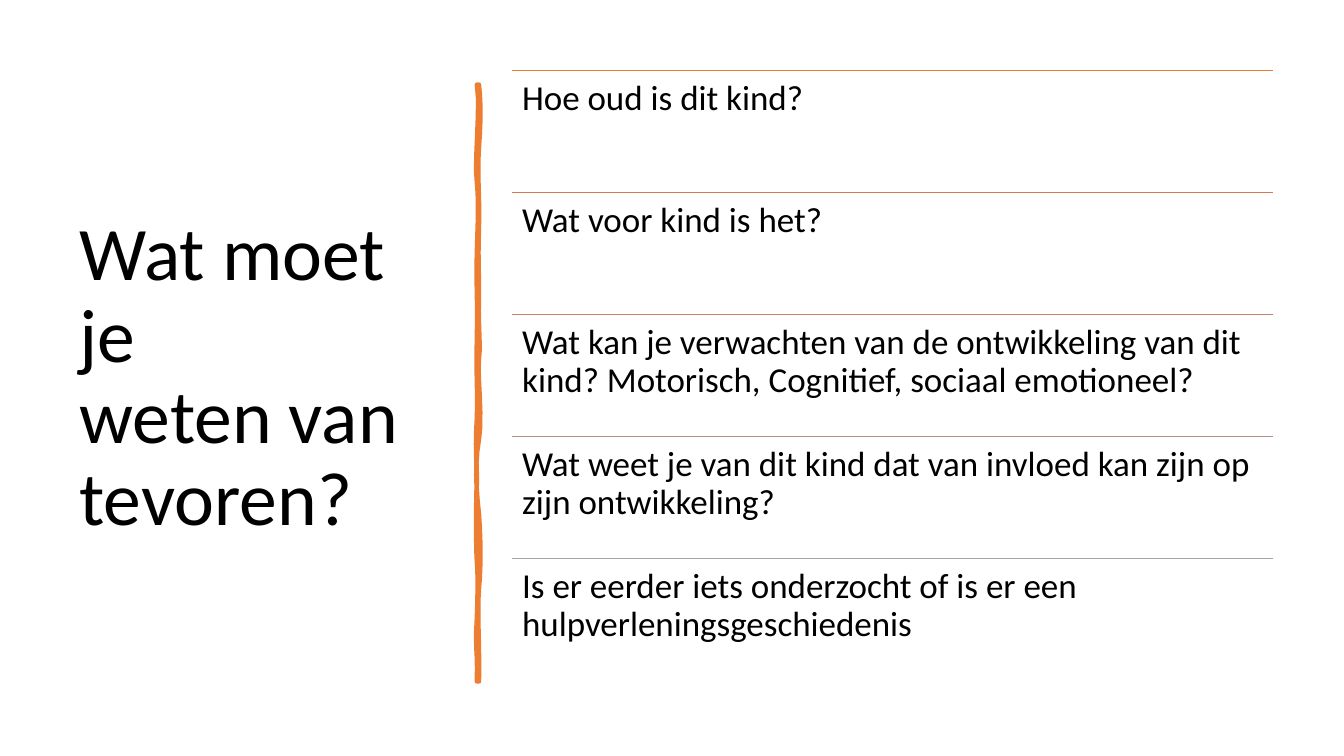
from lxml import etree
from pptx import Presentation
from pptx import util as u
from pptx.dml.color import RGBColor
from pptx.enum import shapes, text
from pptx.oxml import ns

BLACK = RGBColor(0x00, 0x00, 0x00)
ORANGE = RGBColor(0xED, 0x7D, 0x31)
TERRACOTTA = RGBColor(0xD8, 0x7A, 0x51)
ROSE = RGBColor(0xC4, 0x81, 0x70)
MAUVE = RGBColor(0xB4, 0x90, 0x8B)
GREY = RGBColor(0xA5, 0xA5, 0xA5)

QUESTIONS = [
    ("Hoe oud is dit kind?", ORANGE),
    ("Wat voor kind is het?", TERRACOTTA),
    ("Wat kan je verwachten van de ontwikkeling van dit kind? "
     "Motorisch, Cognitief, sociaal emotioneel?", ROSE),
    ("Wat weet je van dit kind dat van invloed kan zijn op "
     "zijn ontwikkeling?", MAUVE),
    ("Is er eerder iets onderzocht of is er een "
     "hulpverleningsgeschiedenis", GREY),
]
LIST_LEFT, LIST_TOP, LIST_WIDTH, ROW_HEIGHT = 5.08, 0.7, 7.55, 1.21

STROKE_START = (4.75, 0.84)
STROKE_CURVES = [
    (4.77, 1.02, 4.77, 1.19, 4.75, 1.46),
    (4.73, 1.73, 4.76, 1.95, 4.75, 2.26),
    (4.74, 2.57, 4.75, 2.62, 4.75, 2.94),
    (4.74, 3.25, 4.77, 3.42, 4.75, 3.56),
    (4.73, 3.7, 4.79, 4.14, 4.75, 4.36),
    (4.71, 4.57, 4.72, 4.84, 4.75, 5.1),
    (4.77, 5.36, 4.77, 5.64, 4.75, 5.84),
    (4.73, 6.03, 4.76, 6.5, 4.75, 6.76),
    (4.74, 6.76, 4.73, 6.76, 4.73, 6.76),
    (4.74, 6.46, 4.71, 6.44, 4.73, 6.13),
    (4.74, 5.83, 4.74, 5.7, 4.73, 5.57),
    (4.72, 5.44, 4.72, 4.95, 4.73, 4.77),
    (4.73, 4.59, 4.71, 4.45, 4.73, 4.15),
    (4.74, 3.86, 4.72, 3.73, 4.73, 3.35),
    (4.74, 2.98, 4.72, 2.81, 4.73, 2.5),
    (4.74, 2.18, 4.75, 2, 4.73, 1.81),
    (4.7, 1.63, 4.77, 1.04, 4.73, 0.84),
]


def curve_points(start, curves, steps=6):
    points = []
    for x1, y1, x2, y2, x3, y3 in curves:
        for step in range(1, steps + 1):
            t = step / steps
            s = 1 - t
            points.append(tuple(
                s**3 * a + 3 * s * s * t * b + 3 * s * t * t * c + t**3 * d
                for a, b, c, d in zip(start, (x1, y1), (x2, y2), (x3, y3))))
        start = (x3, y3)
    return points


class SlideBuilder:
    font = "Calibri"
    color = BLACK
    line_spacing = 0.9

    def __init__(self, page):
        self.page = page

    def text(self, content, left, top, width, height, size, anchor, margin_y):
        box = self.page.shapes.add_textbox(*map(u.Inches, (left, top, width, height)))
        frame = box.text_frame
        frame.word_wrap = True
        frame.vertical_anchor = anchor
        frame.margin_left = frame.margin_right = u.Inches(0.1)
        frame.margin_top = frame.margin_bottom = u.Inches(margin_y)
        frame.text = content
        para = frame.paragraphs[0]
        para.line_spacing = self.line_spacing
        for span in para.runs:
            span.font.name = self.font
            span.font.size = u.Pt(size)
            span.font.color.rgb = self.color

    def rule(self, left, top, width, color):
        line = self.page.shapes.add_connector(
            shapes.MSO_CONNECTOR.STRAIGHT,
            *map(u.Inches, (left, top, left + width, top)))
        line.line.color.rgb = color
        line.line.width = u.Pt(1)
        etree.SubElement(line._element.spPr, ns.qn("a:effectLst"))

    def brush_stroke(self, start, curves, color):
        builder = self.page.shapes.build_freeform(*map(u.Inches, start))
        builder.add_line_segments(
            [(u.Inches(x), u.Inches(y)) for x, y in curve_points(start, curves)])
        stroke = builder.convert_to_shape()
        stroke.shadow.inherit = False
        stroke.fill.solid()
        stroke.fill.fore_color.rgb = color
        stroke.line.color.rgb = color
        stroke.line.width = u.Pt(3.25)
        outline = stroke._element.spPr.find(ns.qn("a:ln"))
        etree.SubElement(outline, ns.qn("a:round"))


def main():
    deck = Presentation()
    deck.slide_width, deck.slide_height = u.Inches(13.33), u.Inches(7.5)
    slide = SlideBuilder(deck.slides.add_slide(deck.slide_layouts[6]))
    slide.text("Wat moet je\vweten van\vtevoren?", 0.69, 0.7, 3.74, 6.11,
               54, text.MSO_ANCHOR.MIDDLE, 0.05)
    slide.brush_stroke(STROKE_START, STROKE_CURVES, ORANGE)
    for row, (question, color) in enumerate(QUESTIONS):
        top = LIST_TOP + row * ROW_HEIGHT
        slide.rule(LIST_LEFT, top, LIST_WIDTH, color)
        slide.text(question, LIST_LEFT, top, LIST_WIDTH, ROW_HEIGHT,
                   25, text.MSO_ANCHOR.TOP, 0.1)
    deck.save("out.pptx")


if __name__ == "__main__":
    main()
